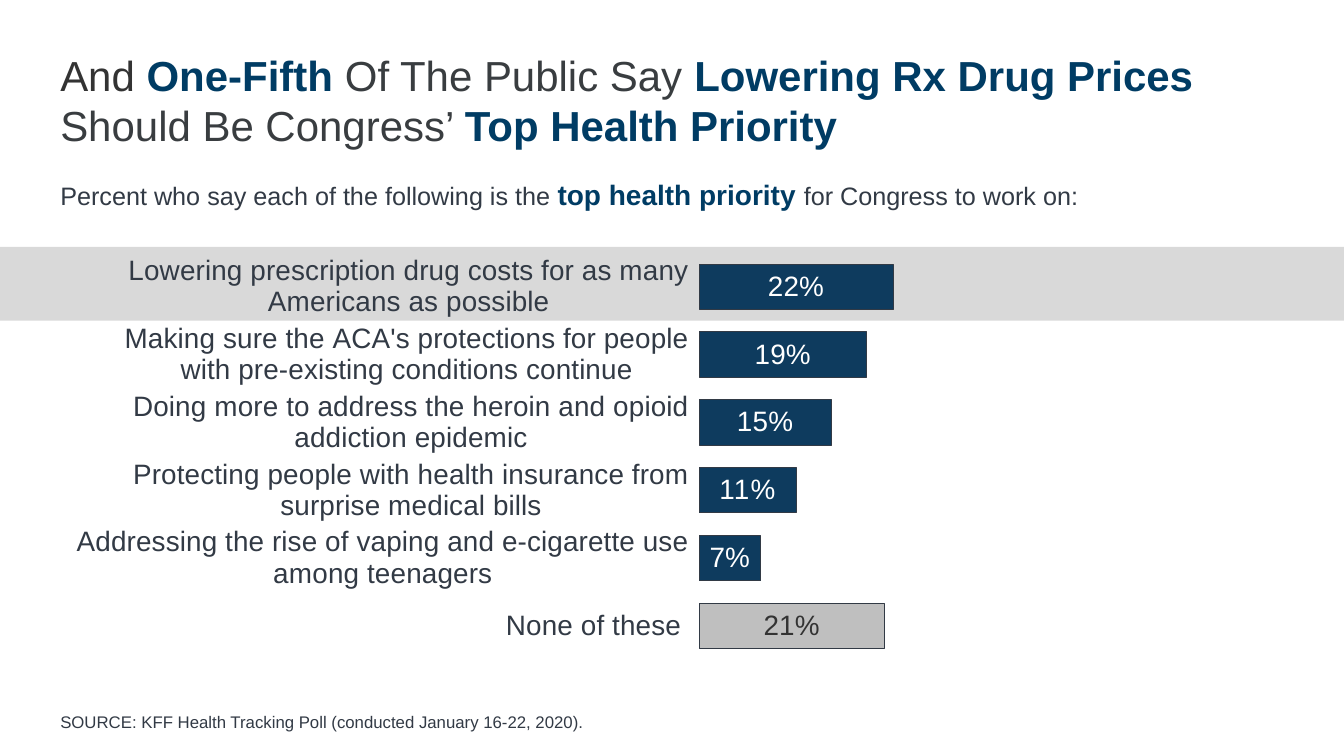
from lxml.etree import SubElement
from pptx import Presentation
from pptx.chart.data import CategoryChartData
from pptx.dml.color import RGBColor
from pptx.enum.chart import XL_CHART_TYPE, XL_LABEL_POSITION, XL_TICK_LABEL_POSITION, XL_TICK_MARK
from pptx.enum.shapes import MSO_SHAPE
from pptx.oxml import parse_xml
from pptx.oxml.ns import nsdecls, qn
from pptx.util import Cm, Pt

FONT = "Arial"
NAVY, SLATE, GREY, DARK = "003C64", "323A45", "393D40", "333333"
ISSUES = [
    ("Lowering prescription drug costs for as many Americans as possible", 0.22),
    ("Making sure the ACA's protections for people with pre-existing conditions continue", 0.19),
    ("Doing more to address the heroin and opioid addiction epidemic", 0.15),
    ("Protecting people with health insurance from surprise medical bills", 0.11),
    ("Addressing the rise of vaping and e-cigarette use among teenagers", 0.07),
    ("None of these ", 0.21),
]


def shade(code):
    """Turn a hex string into a colour."""
    return RGBColor.from_string(code)


def style(font, size, color, bold=False):
    """Set the face, size, colour and weight of a font."""
    font.name, font.size, font.bold = FONT, Pt(size), bold
    font.color.rgb = shade(color)


def write(para, text, size=18, color=SLATE, bold=False):
    """Add one formatted run to a paragraph."""
    run = para.add_run()
    run.text = text
    style(run.font, size, color, bold)


def block(slide, box):
    """Add a wrapping text box and return its first paragraph."""
    frame = slide.shapes.add_textbox(*map(Cm, box)).text_frame
    frame.word_wrap = True
    return frame.paragraphs[0]


def head(slide, box):
    """Place the headline at the top of the box and the question under it."""
    left, top, width, height = box
    title = block(slide, (left, top, width, 1.9))
    write(title, "And", 30, DARK)
    write(title, " One-Fifth", 30, NAVY, True)
    write(title, " Of The Public Say ", 30, GREY)
    write(title, "Lowering Rx Drug Prices ", 30, NAVY, True)
    write(title, "Should Be Congress’ ", 30, GREY)
    write(title, "Top Health Priority", 30, NAVY, True)
    ask = block(slide, (left, top + height - 1.12, width - 0.91, 1.12))
    write(ask, "Percent who say each of the following is the ")
    write(ask, "top health priority ", 20, NAVY, True)
    write(ask, "for Congress to work on:")


def band(slide, box):
    """Shade the row of the leading issue."""
    shape = slide.shapes.add_shape(MSO_SHAPE.RECTANGLE, *map(Cm, box))
    shape.shadow.inherit = False
    shape.fill.solid()
    shape.fill.fore_color.rgb = shade("D9D9D9")
    shape.line.fill.background()


def frame_plot(chart, **parts):
    """Fix the inner plot area as fractions of the chart."""
    area = chart._chartSpace.chart.plotArea
    for old in area.findall(qn("c:layout")):
        area.remove(old)
    layout = parse_xml(f"<c:layout {nsdecls('c')}/>")
    manual = SubElement(layout, qn("c:manualLayout"))
    rules = {"layoutTarget": "inner", "xMode": "edge", "yMode": "edge", **parts}
    for name, value in rules.items():
        SubElement(manual, qn(f"c:{name}")).set("val", str(value))
    area.insert(0, layout)


def bars(slide, box):
    """Chart the share of the public that names each issue."""
    data = CategoryChartData(number_format="0%")
    names, shares = zip(*ISSUES)
    data.categories = names
    data.add_series("Series 1", shares)
    chart = slide.shapes.add_chart(XL_CHART_TYPE.BAR_STACKED, *map(Cm, box), data).chart
    chart.has_legend = chart.has_title = False
    style(chart.font, 14, DARK)
    frame_plot(chart, x=0.494, y=0.002, w=0.496, h=0.971)

    axis = chart.category_axis
    axis.reverse_order = True
    axis.major_tick_mark = XL_TICK_MARK.OUTSIDE
    axis.tick_label_position = XL_TICK_LABEL_POSITION.LOW
    axis.format.line.fill.background()
    style(axis.tick_labels.font, 20, SLATE)
    scale = chart.value_axis
    scale.minimum_scale, scale.maximum_scale, scale.major_unit = 0, 0.7, 0.1
    scale.has_major_gridlines = scale.visible = False

    plot = chart.plots[0]
    plot.gap_width, plot.overlap, plot.vary_by_categories = 50, 100, False
    series = plot.series[0]
    labels = series.data_labels
    labels.show_value = True
    labels.number_format, labels.number_format_is_linked = "0%", False
    labels.position = XL_LABEL_POSITION.CENTER
    style(labels.font, 20, "FFFFFF")
    none = series.points[len(ISSUES) - 1]
    for part, color in ((series, "0E3B5E"), (none, "BFBFBF")):
        part.format.fill.solid()
        part.format.fill.fore_color.rgb = shade(color)
        part.format.line.color.rgb = shade(SLATE)
        part.format.line.width = Pt(0.75)
    style(none.data_label.font, 20, DARK)
    none.data_label.position = XL_LABEL_POSITION.CENTER


def foot(slide, box):
    """Place the source line."""
    write(block(slide, box), "SOURCE: KFF Health Tracking Poll (conducted January 16-22, 2020).", 12)


def main():
    """Build and save the slide."""
    deck = Presentation()
    deck.slide_width, deck.slide_height = Cm(33.87), Cm(19.05)
    slide = deck.slides.add_slide(deck.slide_layouts[6])
    band(slide, (0, 6.22, 33.87, 1.86))
    bars(slide, (1.93, 6.35, 31.57, 10.57))
    head(slide, (1.27, 1.12, 32.23, 4.34))
    foot(slide, (1.27, 17.81, 29.18, 0.7))
    deck.save("out.pptx")


if __name__ == "__main__":
    main()
